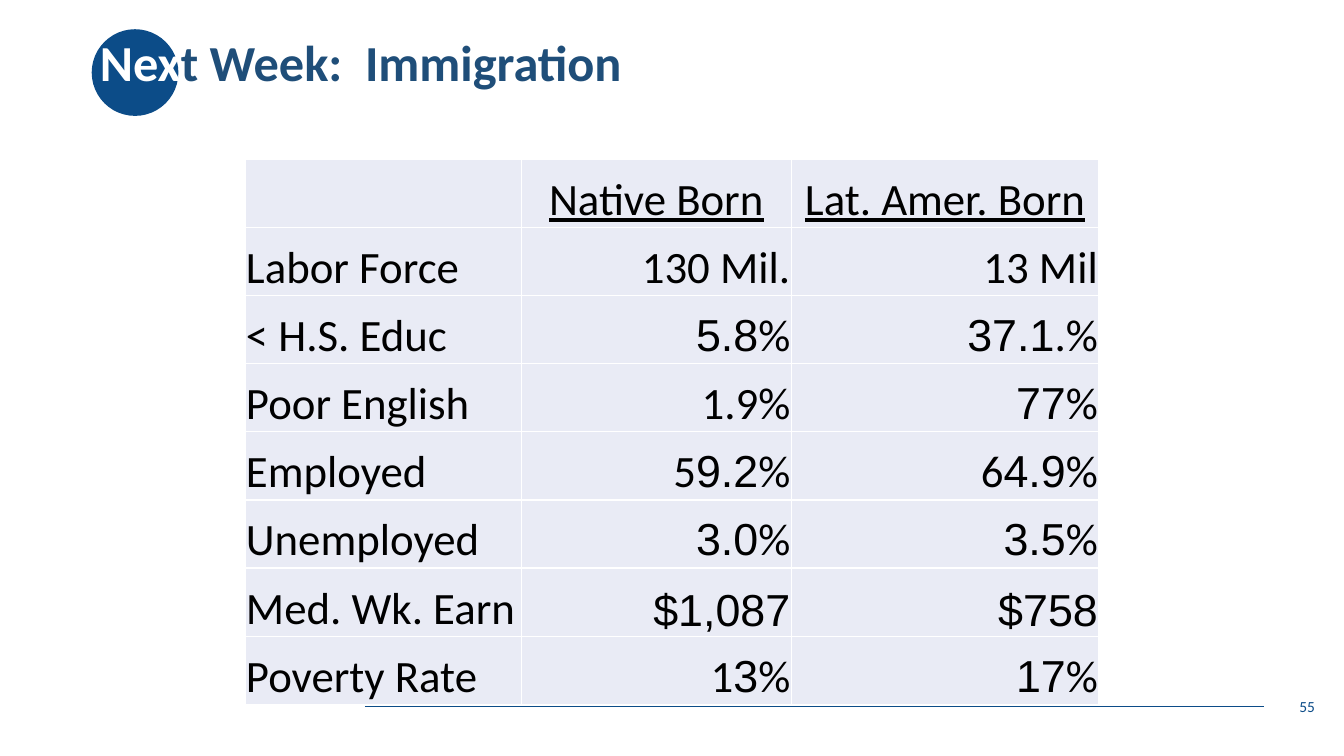
from lxml import etree
from pptx import Presentation, util as u
from pptx.dml.color import RGBColor
from pptx.enum import shapes, text
from pptx.oxml.ns import qn

COLORS = {"blue": "0C4C88", "title": "1F4E79", "white": "FFFFFF",
          "black": "000000", "cell": "E9EBF5"}
COLUMN_WIDTHS = [2.74, 2.68, 3.05]
# Text between bars is set in Arial, the rest in Calibri.
ROWS = [
    ["", "Native Born", "Lat. Amer. Born"],
    ["Labor Force", "130 Mil.", "13 Mil"],
    ["< H.S. Educ", "|5.8|%", "|37.1|.%"],
    ["Poor English", "1.9%", "|77|%"],
    ["Employed", "5|9.2|%", "6|4.9|%"],
    ["Unemployed", "|3.0|%", "|3.5|%"],
    ["Med. Wk. Earn", "|$1,087|", "|$758|"],
    ["Poverty Rate", "1|3|%", "|17|%"],
]


def color(name):
    return RGBColor.from_string(COLORS[name])


def inches(box):
    return [u.Inches(length) for length in box]


def set_all(target, values):
    for name, value in values.items():
        setattr(target, name, value)


def add_run(paragraph, words, size, color_name, **formats):
    run = paragraph.add_run()
    run.text = words
    set_all(run.font, {"name": "Calibri", "size": u.Pt(size), **formats})
    run.font.color.rgb = color(color_name)


def add_decoration(slide, circle_box, rule_start, rule_length):
    circle = slide.shapes.add_shape(shapes.MSO_SHAPE.OVAL, *inches(circle_box))
    circle.shadow.inherit = False
    circle.fill.solid()
    circle.fill.fore_color.rgb = color("blue")
    circle.line.fill.background()

    left, top = rule_start
    rule = slide.shapes.add_connector(
        shapes.MSO_CONNECTOR.STRAIGHT, *inches([left, top, left + rule_length, top]))
    rule.line.color.rgb = color("blue")
    rule.line.width = u.Pt(0.5)
    etree.SubElement(rule.element.spPr, qn("a:effectLst"))


def add_title(slide, box):
    title = slide.shapes.title
    set_all(title, dict(zip(("left", "top", "width", "height"), inches(box))))
    # The title lies in front of the circle.
    title.element.getparent().append(title.element)
    frame = title.text_frame
    set_all(frame, {"word_wrap": True, "auto_size": text.MSO_AUTO_SIZE.NONE,
                    "vertical_anchor": text.MSO_ANCHOR.MIDDLE,
                    "margin_left": u.Inches(0.1), "margin_top": u.Inches(0.05),
                    "margin_bottom": u.Inches(0.62)})
    paragraph = frame.paragraphs[0]
    set_all(paragraph, {"alignment": text.PP_ALIGN.LEFT, "line_spacing": 0.9})
    add_run(paragraph, "Nex", 36, "white", bold=True)
    add_run(paragraph, "t Week:  Immigration", 36, "title", bold=True)


def add_borders(cell):
    properties = cell._tc.get_or_add_tcPr()
    for position, side in enumerate(("lnL", "lnR", "lnT", "lnB")):
        line = etree.Element(qn(f"a:{side}"), w=str(u.Pt(1)))
        fill = etree.SubElement(line, qn("a:solidFill"))
        etree.SubElement(fill, qn("a:srgbClr"), val=COLORS["white"])
        properties.insert(position, line)


def fill_cell(cell, words, alignment, underline):
    cell.fill.solid()
    cell.fill.fore_color.rgb = color("cell")
    add_borders(cell)
    set_all(cell, {"vertical_anchor": text.MSO_ANCHOR.BOTTOM,
                   "margin_left": u.Inches(0.01), "margin_right": u.Inches(0.01),
                   "margin_top": u.Inches(0.01), "margin_bottom": 0})
    paragraph = cell.text_frame.paragraphs[0]
    paragraph.alignment = alignment
    for index, part in enumerate(words.split("|")):
        if part:
            add_run(paragraph, part, 32, "black", underline=underline,
                    name="Arial" if index % 2 else "Calibri")


def add_comparison_table(slide, box):
    table = slide.shapes.add_table(len(ROWS), len(COLUMN_WIDTHS), *inches(box)).table
    set_all(table, {"first_row": False, "horz_banding": False})
    for column, width in zip(table.columns, COLUMN_WIDTHS):
        column.width = u.Inches(width)
    for row_index, row in enumerate(ROWS):
        for column_index, words in enumerate(row):
            header = row_index == 0
            if header:
                alignment = text.PP_ALIGN.CENTER
            elif column_index == 0:
                alignment = text.PP_ALIGN.LEFT
            else:
                alignment = text.PP_ALIGN.RIGHT
            fill_cell(table.cell(row_index, column_index), words, alignment, header)


def add_slide_number(slide, box, number):
    frame = slide.shapes.add_textbox(*inches(box)).text_frame
    set_all(frame, {"word_wrap": True, "vertical_anchor": text.MSO_ANCHOR.MIDDLE})
    paragraph = frame.paragraphs[0]
    paragraph.alignment = text.PP_ALIGN.RIGHT
    add_run(paragraph, number, 11, "blue")


def main():
    presentation = Presentation()
    set_all(presentation, {"slide_width": u.Inches(13.33), "slide_height": u.Inches(7.5)})
    slide = presentation.slides.add_slide(presentation.slide_layouts[5])
    add_decoration(slide, (0.91, 0.29, 0.86, 0.86), (3.62, 7.01), 8.92)
    add_title(slide, (0.89, 0.12, 9, 1.62))
    add_comparison_table(slide, (2.43, 1.58, sum(COLUMN_WIDTHS), 5.41))
    add_slide_number(slide, (10.14, 6.81, 3, 0.4), "55")
    presentation.save("out.pptx")


if __name__ == "__main__":
    main()
